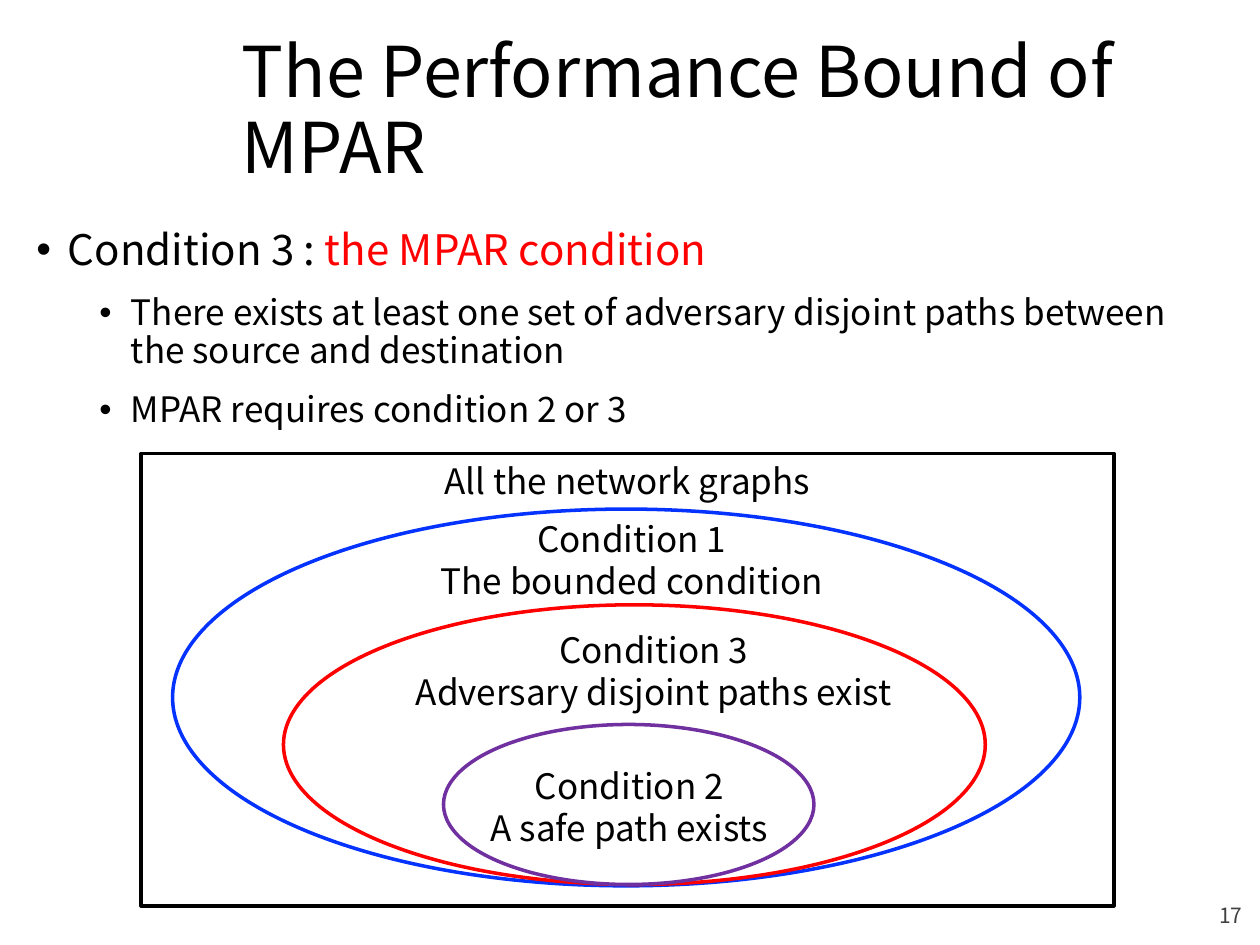
from lxml import etree
from pptx import Presentation
from pptx.dml.color import RGBColor
from pptx.enum.shapes import MSO_SHAPE
from pptx.enum.text import MSO_ANCHOR, PP_ALIGN
from pptx.oxml.ns import qn
from pptx.util import Inches, Pt

FONT = "Noto Sans CJK JP"
BLACK = RGBColor(0x00, 0x00, 0x00)
WHITE = RGBColor(0xFF, 0xFF, 0xFF)
GRAY = RGBColor(0x40, 0x40, 0x40)
RED = RGBColor(0xFF, 0x00, 0x00)
BLUE = RGBColor(0x04, 0x32, 0xFF)
PURPLE = RGBColor(0x70, 0x30, 0xA0)

TITLE = "The Performance Bound of MPAR"
PAGE_NUMBER = "17"
# level, size, runs of (text, colour)
BULLETS = [
    (0, 24, [("Condition 3 : ", BLACK), ("the MPAR condition", RED)]),
    (1, 20, [("There exists at least one set of adversary disjoint paths "
              "between the source and destination", BLACK)]),
    (1, 20, [("MPAR requires condition 2 or 3", BLACK)]),
]
# outline, colour, (left, top, width, height), from the outermost set inwards
SETS = [
    (MSO_SHAPE.RECTANGLE, BLACK, (1.12, 3.6, 7.72, 3.59)),
    (MSO_SHAPE.OVAL, BLUE, (1.37, 4.04, 7.2, 2.99)),
    (MSO_SHAPE.OVAL, RED, (2.25, 4.8, 5.57, 2.22)),
    (MSO_SHAPE.OVAL, PURPLE, (3.52, 5.75, 2.94, 1.27)),
]
SET_LABELS = [
    (["All the network graphs"], (3.14, 3.6, 3.68, 0.44)),
    (["Condition 1", "The bounded condition"], (3.28, 4.06, 3.47, 0.77)),
    (["Condition 3", "Adversary disjoint paths exist"], (3.04, 4.94, 4.3, 0.77)),
    (["Condition 2", "A safe path exists"], (3.26, 6.02, 3.47, 0.77)),
]


def style(font, size, color):
    font.name = FONT
    font.size = Pt(size)
    font.color.rgb = color


def add_text(slide, box, lines, size, color, align):
    frame = slide.shapes.add_textbox(*map(Inches, box)).text_frame
    frame.word_wrap = True
    frame.text = "\n".join(lines)
    for paragraph in frame.paragraphs:
        paragraph.alignment = align
        style(paragraph.runs[0].font, size, color)
    return frame


def add_title(slide):
    title = slide.shapes.title
    title.left, title.top, title.width, title.height = map(
        Inches, (1.82, 0.17, 7.95, 1.45))
    frame = title.text_frame
    frame.text = TITLE
    frame.vertical_anchor = MSO_ANCHOR.MIDDLE
    heading = frame.paragraphs[0]
    heading.alignment = PP_ALIGN.LEFT
    heading.line_spacing = 0.9
    style(heading.runs[0].font, 40, BLACK)


def add_bullets(slide):
    box = map(Inches, (0.19, 1.77, 9.58, 1.99))
    frame = slide.shapes.add_textbox(*box).text_frame
    frame.word_wrap = True
    for index, (level, size, runs) in enumerate(BULLETS):
        paragraph = frame.add_paragraph() if index else frame.paragraphs[0]
        paragraph.level = level
        paragraph.line_spacing = 0.9
        paragraph.space_before = Pt(6 if index else 0)
        paragraph.space_after = Pt(6)
        properties = paragraph._p.get_or_add_pPr()
        properties.set("marL", str(Inches(0.25 + 0.5 * level)))
        properties.set("indent", str(Inches(-0.25)))
        etree.SubElement(properties, qn("a:buFont"), typeface="Arial")
        etree.SubElement(properties, qn("a:buChar"), char="•")
        for text, color in runs:
            run = paragraph.add_run()
            run.text = text
            style(run.font, size, color)


def add_set(slide, outline, color, box):
    shape = slide.shapes.add_shape(outline, *map(Inches, box))
    shape.shadow.inherit = False
    shape.fill.solid()
    shape.fill.fore_color.rgb = WHITE
    shape.line.color.rgb = color
    shape.line.width = Pt(2)


def main():
    prs = Presentation()
    prs.slide_width, prs.slide_height = Inches(10), Inches(7.5)
    slide = prs.slides.add_slide(prs.slide_layouts.get_by_name("Title Only"))
    add_title(slide)
    add_bullets(slide)
    number = add_text(slide, (8.94, 7.06, 1.02, 0.4), [PAGE_NUMBER], 12, GRAY,
                      PP_ALIGN.RIGHT)
    number.vertical_anchor = MSO_ANCHOR.MIDDLE
    for outline, color, box in SETS:
        add_set(slide, outline, color, box)
    for lines, box in SET_LABELS:
        add_text(slide, box, lines, 20, BLACK, PP_ALIGN.CENTER)
    prs.save("out.pptx")


if __name__ == "__main__":
    main()
